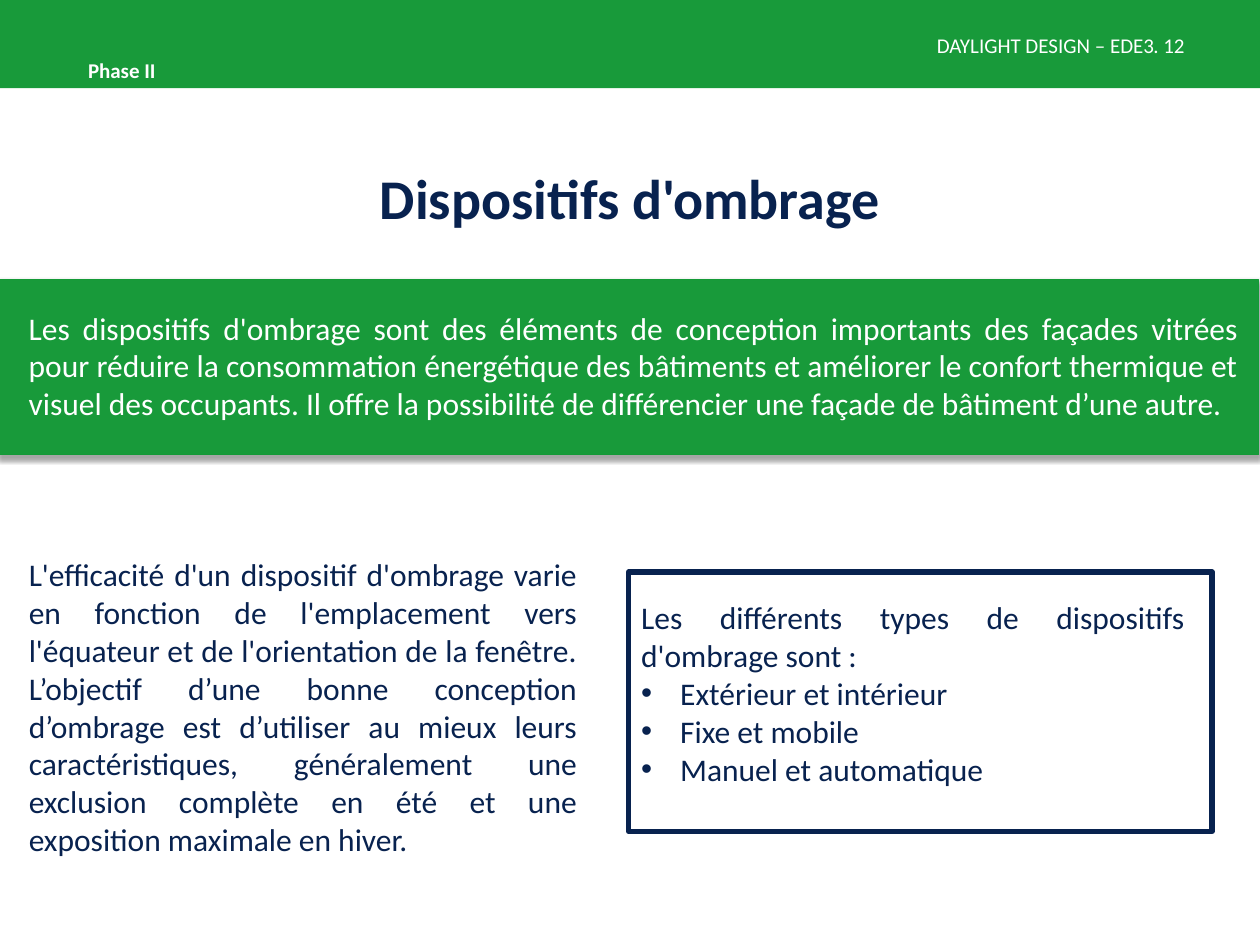
from lxml import etree
from pptx import Presentation
from pptx.dml.color import RGBColor
from pptx.enum.shapes import MSO_SHAPE
from pptx.enum.text import MSO_ANCHOR, PP_ALIGN
from pptx.oxml import parse_xml
from pptx.oxml.ns import nsdecls, qn
from pptx.util import Inches, Pt

GREEN, BAND_LINE, NAVY, WHITE = "189A3A", "149A37", "08224F", "FFFFFF"
FONT = "Calibri"

INTRO = (
    "Les dispositifs d'ombrage sont des éléments de conception importants des "
    "façades vitrées pour réduire la consommation énergétique des bâtiments et "
    "améliorer le confort thermique et visuel des occupants. Il offre la "
    "possibilité de différencier une façade de bâtiment d’une autre."
)
EFFICIENCY = (
    "L'efficacité d'un dispositif d'ombrage varie en fonction de l'emplacement "
    "vers l'équateur et de l'orientation de la fenêtre. L’objectif d’une bonne "
    "conception d’ombrage est d’utiliser au mieux leurs caractéristiques, "
    "généralement une exclusion complète en été et une exposition maximale en hiver."
)
TYPES_LEAD = "Les différents types de dispositifs d'ombrage sont :"
TYPES = ["Extérieur et intérieur", "Fixe et mobile", "Manuel et automatique"]


def rgb(value):
    return RGBColor.from_string(value)


def add_rect(slide, x, y, w, h, fill, line=None, weight=0):
    sp = slide.shapes.add_shape(
        MSO_SHAPE.RECTANGLE, Inches(x), Inches(y), Inches(w), Inches(h))
    sp.shadow.inherit = False
    sp.fill.solid()
    sp.fill.fore_color.rgb = rgb(fill)
    if line:
        sp.line.color.rgb = rgb(line)
        sp.line.width = Pt(weight)
    else:
        sp.line.fill.background()
    return sp


def add_drop_shadow(sp):
    effects = sp._element.spPr.find(qn("a:effectLst"))
    effects.append(parse_xml(
        f'<a:outerShdw {nsdecls("a")} blurRad="{Pt(3.1)}" dist="{Pt(1.8)}" '
        'dir="5400000" rotWithShape="0"><a:srgbClr val="000000">'
        '<a:alpha val="35000"/></a:srgbClr></a:outerShdw>'))


def add_bullet(p):
    pPr = p._p.get_or_add_pPr()
    pPr.set("marL", str(Inches(0.31)))
    pPr.set("indent", str(Inches(-0.31)))
    etree.SubElement(pPr, qn("a:buFont")).set("typeface", "Arial")
    etree.SubElement(pPr, qn("a:buChar")).set("char", "•")


def add_text(slide, x, y, w, h, lines, size, color, align,
             bold=False, wrap=True, anchor=MSO_ANCHOR.TOP, bullets_from=None):
    """Write one paragraph per line; bullets start at index bullets_from."""
    tf = slide.shapes.add_textbox(
        Inches(x), Inches(y), Inches(w), Inches(h)).text_frame
    tf.word_wrap = wrap
    tf.vertical_anchor = anchor
    for i, line in enumerate(lines):
        p = tf.add_paragraph() if i else tf.paragraphs[0]
        p.alignment = align
        if bullets_from is not None and i >= bullets_from:
            add_bullet(p)
        r = p.add_run()
        r.text = line
        r.font.name = FONT
        r.font.size = Pt(size)
        r.font.bold = bold
        r.font.color.rgb = rgb(color)


def add_header(slide, x, y, w, h):
    add_rect(slide, x, y, w, h, GREEN)
    add_text(slide, x + 0.61, y + 0.41, 0.92, 0.3, ["Phase II"], 12, WHITE,
             PP_ALIGN.LEFT, bold=True, wrap=False)
    add_text(slide, x + 5.23, y + 0.21, 4.04, 0.4, ["DAYLIGHT DESIGN – EDE3"],
             12, WHITE, PP_ALIGN.RIGHT)
    add_text(slide, x + 9.03, y + 0.21, 0.48, 0.4, [". 12"], 12, WHITE,
             PP_ALIGN.RIGHT)


def add_title(slide, x, y, w, h):
    add_text(slide, x, y, w, h, ["Dispositifs d'ombrage"], 32, NAVY,
             PP_ALIGN.CENTER, bold=True, anchor=MSO_ANCHOR.MIDDLE)


def add_intro_band(slide, x, y, w, h):
    band = add_rect(slide, x, y, w, h, GREEN, BAND_LINE, 0.75)
    add_drop_shadow(band)
    add_text(slide, x + 0.14, y + 0.18, w - 0.2, 0.96, [INTRO], 18, WHITE,
             PP_ALIGN.JUSTIFY)


def add_efficiency(slide, x, y, w, h):
    add_text(slide, x, y, w, h, [EFFICIENCY], 18, NAVY, PP_ALIGN.JUSTIFY)


def add_types_box(slide, x, y, w, h):
    add_rect(slide, x, y, w, h, WHITE, NAVY, 3)
    add_text(slide, x, y + 0.16, w - 0.12, 1.62, [TYPES_LEAD, *TYPES], 18, NAVY,
             PP_ALIGN.JUSTIFY, bullets_from=1)


def main():
    prs = Presentation()
    prs.slide_width, prs.slide_height = Inches(10), Inches(7.5)
    slide = prs.slides.add_slide(prs.slide_layouts[6])
    add_header(slide, -0.01, 0, 10.01, 0.7)
    add_title(slide, 0.5, 0.94, 9, 1.25)
    add_intro_band(slide, -0.01, 2.22, 10, 1.39)
    add_efficiency(slide, 0.13, 4.36, 4.55, 2.83)
    add_types_box(slide, 4.99, 4.54, 4.63, 2.06)
    prs.save("out.pptx")


if __name__ == "__main__":
    main()
